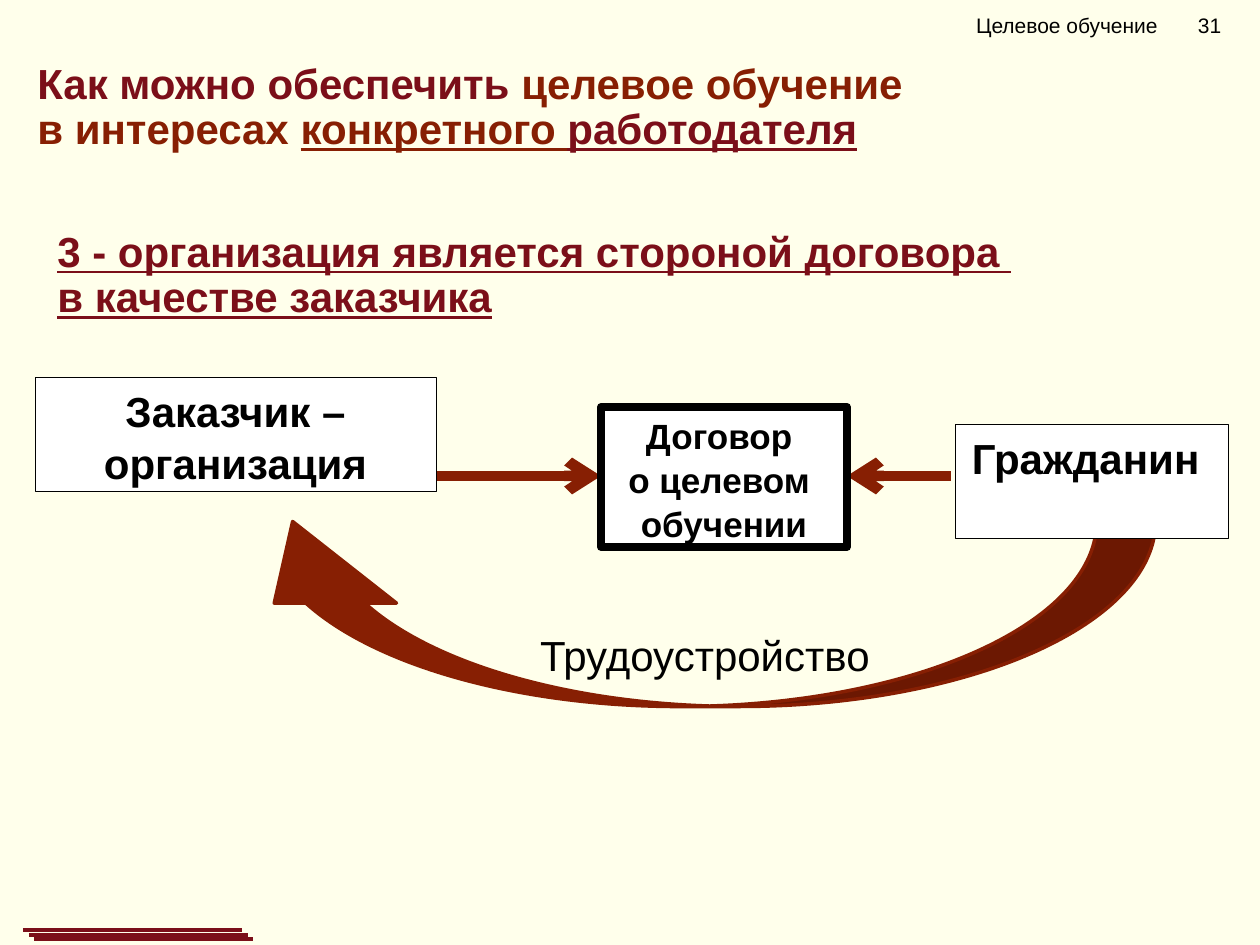
import pptx
import pptx.util
import pptx.dml.color
import pptx.enum.shapes
import pptx.enum.text
import pptx.oxml
import pptx.oxml.ns
import lxml.etree

RGB = pptx.dml.color.RGBColor
CREAM, WHITE, BLACK = RGB(255, 255, 235), RGB(255, 255, 255), RGB(0, 0, 0)
WINE, RUST = RGB(0x7B, 0x0F, 0x19), RGB(0x87, 0x1F, 0x03)
KIND = pptx.enum.shapes.MSO_SHAPE
ALIGN = pptx.enum.text.PP_ALIGN
SCALE = 914400 / 126

WIDTH, HEIGHT = 1260, 945
HEAD = {"size": 24, "bold": True, "color": WINE}
RUSTY = {**HEAD, "color": RUST}
LABEL = {"size": 24, "bold": True, "color": BLACK}

# place, then paragraphs made of (text, format) runs
HEADS = [
    ((25, 57, 1186, 59), [
        [("Как можно обеспечить ", HEAD), ("целевое обучение", RUSTY)],
        [("в интересах ", RUSTY),
         ("конкретного ", {**RUSTY, "underline": True}),
         ("работодателя", {**HEAD, "underline": True})],
    ]),
    ((45, 225, 1186, 59), [
        [(line, {**HEAD, "underline": True})]
        for line in ("3 - организация является стороной договора ",
                     "в качестве заказчика")
    ]),
]
# place, border in points, text size, lines
BOXES = [
    ((601, 407, 246, 140), 4.5, 20, ["Договор ", "о целевом ", "обучении"]),
    ((35, 377, 401, 114), 0.25, 24, ["Заказчик – организация"]),
    ((955, 424, 273, 114), 0.25, 24, ["Гражданин "]),
]
ARROWS = [((951, 476), (847, 476)), ((437, 476), (601, 476))]
CURVE = (601, 152, 185, 924)
BENDS = (0.318, 0.661, 0.441)
JOB = ((501, 621, 381, 64), "Трудоустройство")
TOPIC = ((976, 0, 284, 50), "Целевое обучение\t31")
PAGE_TAB = 222
BARS = [(23, 930), (29, 935), (34, 939)]
BAR_LEN = 219


def emu(*nums):
    return [pptx.util.Emu(round(num * SCALE)) for num in nums]


def write(shape, paras, align=ALIGN.LEFT, spacing=1.0, **frame):
    text = shape.text_frame
    for name, value in {"word_wrap": True, **frame}.items():
        setattr(text, name, value)
    for i, runs in enumerate(paras):
        para = text.paragraphs[0] if i == 0 else text.add_paragraph()
        para.alignment, para.line_spacing = align, spacing
        for words, form in runs:
            run = para.add_run()
            run.text = words
            run.font.name = "Arial"
            for name, value in form.items():
                if name == "color":
                    run.font.color.rgb = value
                elif name == "size":
                    run.font.size = pptx.util.Pt(value)
                else:
                    setattr(run.font, name, value)


def paint(shape, fill, line, points):
    shape.shadow.inherit = False
    shape.fill.solid()
    shape.fill.fore_color.rgb = fill
    shape.line.color.rgb = line
    shape.line.width = pptx.util.Pt(points)


def draw_line(slide, start, end, color, points, head=False):
    link = slide.shapes.add_connector(
        pptx.enum.shapes.MSO_CONNECTOR.STRAIGHT, *emu(*start, *end))
    link.line.color.rgb = color
    link.line.width = pptx.util.Pt(points)
    tag = pptx.oxml.ns.qn
    props = link._element.spPr
    if head:
        tail = lxml.etree.SubElement(props.find(tag("a:ln")), tag("a:tailEnd"))
        tail.set("type", "arrow")
    lxml.etree.SubElement(props, tag("a:effectLst"))


def add_tab(para, left):
    """Put one left tab stop in the paragraph, left px from its start."""
    tag = pptx.oxml.ns.qn
    stops = lxml.etree.SubElement(para._p.get_or_add_pPr(), tag("a:tabLst"))
    stop = lxml.etree.SubElement(stops, tag("a:tab"))
    stop.set("pos", str(emu(left)[0]))
    stop.set("algn", "l")


def main():
    deck = pptx.Presentation()
    deck.slide_width, deck.slide_height = emu(WIDTH, HEIGHT)
    slide = deck.slides.add_slide(deck.slide_layouts[6])
    slide.background.fill.solid()
    slide.background.fill.fore_color.rgb = CREAM
    shapes = slide.shapes

    for start, end in ARROWS:
        draw_line(slide, start, end, RUST, 6, head=True)

    curve = shapes.add_shape(KIND.CURVED_RIGHT_ARROW, *emu(*CURVE))
    paint(curve, RUST, RUST, 2)
    curve.rotation = 90
    curve._element.spPr.xfrm.set("flipH", "1")
    for i, bend in enumerate(BENDS):
        curve.adjustments[i] = bend

    for place, border, size, lines in BOXES:
        box = shapes.add_shape(KIND.RECTANGLE, *emu(*place))
        paint(box, WHITE, BLACK, border)
        write(box, [[(line, {**LABEL, "size": size})] for line in lines],
              ALIGN.CENTER, 1.04,
              vertical_anchor=pptx.enum.text.MSO_ANCHOR.TOP)

    place, words = JOB
    write(shapes.add_textbox(*emu(*place)),
          [[(words, {**LABEL, "bold": False})]], ALIGN.RIGHT, 1.04)

    for place, paras in HEADS:
        write(shapes.add_textbox(*emu(*place)), paras, spacing=0.9)

    place, words = TOPIC
    topic = shapes.add_textbox(*emu(*place))
    write(topic, [[(words, {"size": 12, "color": BLACK})]], margin_left=0,
          vertical_anchor=pptx.enum.text.MSO_ANCHOR.MIDDLE)
    add_tab(topic.text_frame.paragraphs[0], PAGE_TAB)

    for left, top in BARS:
        draw_line(slide, (left, top), (left + BAR_LEN, top), WINE, 2.25)

    deck.save("out.pptx")


if __name__ == "__main__":
    main()
